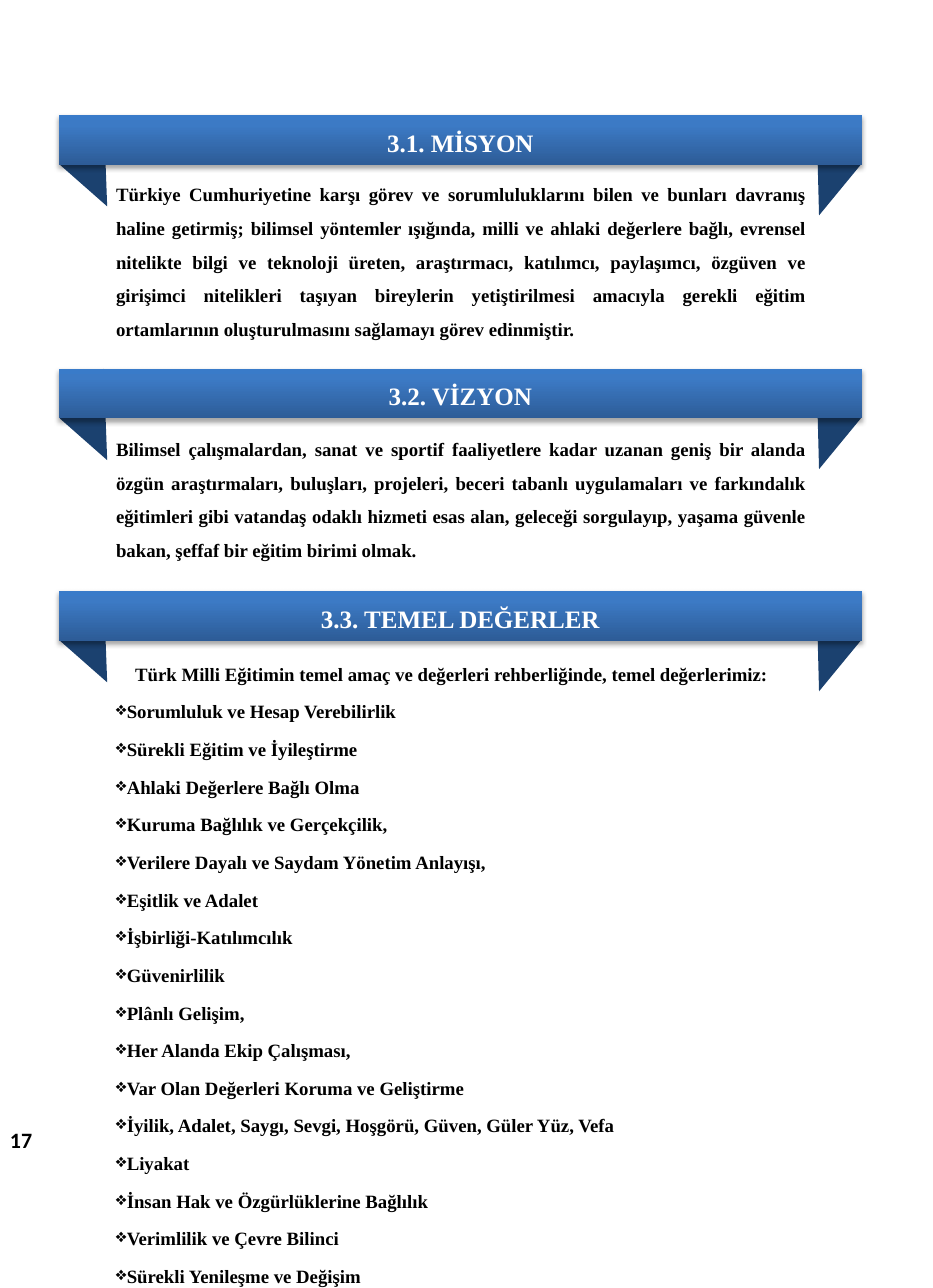
from pptx import Presentation
from pptx.dml.color import RGBColor
from pptx.enum.shapes import MSO_SHAPE
from pptx.enum.text import MSO_ANCHOR, MSO_AUTO_SIZE, PP_ALIGN
from pptx.oxml import parse_xml
from pptx.oxml.ns import nsdecls, qn
from pptx.util import Inches, Pt

BLACK = RGBColor(0x00, 0x00, 0x00)
WHITE = RGBColor(0xFF, 0xFF, 0xFF)
FOLD_BLUE = RGBColor(0x1B, 0x41, 0x6F)
BANNER_STOPS = [
    (0, RGBColor(0x2D, 0x5C, 0x97)),
    (80, RGBColor(0x3C, 0x7A, 0xC5)),
    (100, RGBColor(0x39, 0x7B, 0xC9)),
]
RECTANGLE = MSO_SHAPE.RECTANGLE
MIDDLE = MSO_ANCHOR.MIDDLE
GROW = MSO_AUTO_SIZE.SHAPE_TO_FIT_TEXT
CENTER, JUSTIFY, LEFT = PP_ALIGN.CENTER, PP_ALIGN.JUSTIFY, PP_ALIGN.LEFT
SERIF, SANS = "Times New Roman", "Calibri"

BANNER_LEFT, BANNER_WIDTH, BANNER_HEIGHT = 0.52, 7.12, 0.44
TEXT_LEFT = 0.93
# Corners of the ribbon folds, measured from the banner's top left corner
FOLDS = [
    [(0.01, 0.44), (0.40, 0), (0.43, 0.81)],
    [(7.11, 0.44), (6.74, 0.89), (6.72, 0.12)],
]

MISSION = (
    "Türkiye Cumhuriyetine karşı görev ve sorumluluklarını bilen ve bunları davranış "
    "haline getirmiş; bilimsel yöntemler ışığında, milli ve ahlaki değerlere bağlı, "
    "evrensel nitelikte bilgi ve teknoloji üreten, araştırmacı, katılımcı, paylaşımcı, "
    "özgüven ve girişimci nitelikleri taşıyan bireylerin yetiştirilmesi amacıyla gerekli "
    "eğitim ortamlarının oluşturulmasını sağlamayı görev edinmiştir."
)
VISION = (
    "Bilimsel çalışmalardan, sanat ve sportif faaliyetlere kadar uzanan geniş bir alanda "
    "özgün araştırmaları, buluşları, projeleri, beceri tabanlı uygulamaları ve farkındalık "
    "eğitimleri gibi vatandaş odaklı hizmeti esas alan, geleceği sorgulayıp, yaşama güvenle "
    "bakan, şeffaf bir eğitim birimi olmak."
)
VALUES_INTRO = (
    "Türk Milli Eğitimin temel amaç ve değerleri rehberliğinde, temel değerlerimiz:"
)
VALUES = [
    "Sorumluluk ve Hesap Verebilirlik",
    "Sürekli Eğitim ve İyileştirme",
    "Ahlaki Değerlere Bağlı Olma",
    "Kuruma Bağlılık ve Gerçekçilik,",
    "Verilere Dayalı ve Saydam Yönetim Anlayışı,",
    "Eşitlik ve Adalet",
    "İşbirliği-Katılımcılık",
    "Güvenirlilik",
    "Plânlı Gelişim,",
    "Her Alanda Ekip Çalışması,",
    "Var Olan Değerleri Koruma ve Geliştirme",
    "İyilik, Adalet, Saygı, Sevgi, Hoşgörü, Güven, Güler Yüz, Vefa",
    "Liyakat",
    "İnsan Hak ve Özgürlüklerine Bağlılık",
    "Verimlilik ve Çevre Bilinci",
    "Sürekli Yenileşme ve Değişim",
]


def write(para, text, size, color=BLACK, font=SERIF, align=JUSTIFY, spacing=1.0):
    para.alignment = align
    para.line_spacing = spacing
    span = para.add_run()
    span.text = text
    span.font.name = font
    span.font.size = Pt(size)
    span.font.bold = True
    span.font.color.rgb = color


def set_indent(para, first_line, bullet=None):
    properties = para._p.get_or_add_pPr()
    properties.set("marL", "0")
    properties.set("indent", str(Inches(first_line)))
    if bullet:
        properties.append(parse_xml(
            f'<a:buClr {nsdecls("a")}><a:srgbClr val="{BLACK}"/></a:buClr>'))
        properties.append(parse_xml(f'<a:buChar {nsdecls("a")} char="{bullet}"/>'))


def add_text_frame(page, left, top, width, height):
    box = page.shapes.add_textbox(
        Inches(left), Inches(top), Inches(width), Inches(height))
    frame = box.text_frame
    frame.word_wrap = True
    frame.auto_size = GROW
    return frame


def add_fold(page, left, top, corners):
    points = [(Inches(left + x), Inches(top + y)) for x, y in corners]
    builder = page.shapes.build_freeform(*points[0])
    builder.add_line_segments(points[1:], close=True)
    fold = builder.convert_to_shape()
    fold.shadow.inherit = False
    fold.fill.solid()
    fold.fill.fore_color.rgb = FOLD_BLUE
    fold.line.fill.background()


def style_banner(banner):
    """Give the banner its upward gradient and soft drop shadow."""
    banner.line.fill.background()
    banner.fill.gradient()
    banner.fill.gradient_angle = 90
    properties = banner._element.spPr
    stops = properties.find(qn("a:gradFill")).find(qn("a:gsLst"))
    for stop in list(stops):
        stops.remove(stop)
    for percent, color in BANNER_STOPS:
        stops.append(parse_xml(
            f'<a:gs {nsdecls("a")} pos="{percent * 1000}"><a:srgbClr val="{color}"/></a:gs>'))
    banner.shadow.inherit = False
    properties.find(qn("a:effectLst")).append(parse_xml(
        f'<a:outerShdw {nsdecls("a")} blurRad="{Pt(3.1)}" dist="{Pt(1.8)}" dir="5400000" '
        'rotWithShape="0"><a:srgbClr val="000000"><a:alpha val="35000"/></a:srgbClr>'
        '</a:outerShdw>'))


def add_ribbon(page, top, heading):
    for corners in FOLDS:
        add_fold(page, BANNER_LEFT, top, corners)
    banner = page.shapes.add_shape(
        RECTANGLE, Inches(BANNER_LEFT), Inches(top),
        Inches(BANNER_WIDTH), Inches(BANNER_HEIGHT))
    style_banner(banner)
    banner.text_frame.vertical_anchor = MIDDLE
    write(banner.text_frame.paragraphs[0], heading, 16, WHITE, align=CENTER, spacing=1.15)


def add_statement(page, top, height, text):
    frame = add_text_frame(page, TEXT_LEFT, top, 6.32, height)
    write(frame.paragraphs[0], text, 12, spacing=1.5)


def add_values(page, top, height):
    frame = add_text_frame(page, TEXT_LEFT, top, 6.66, height)
    intro = frame.paragraphs[0]
    set_indent(intro, 0.17)
    write(intro, VALUES_INTRO, 12, spacing=1.67)
    for value in VALUES:
        para = frame.add_paragraph()
        set_indent(para, -0.08, "❖")
        write(para, value, 12, spacing=1.67)


def add_page_number(page, left, top):
    frame = add_text_frame(page, left, top, 0.51, 0.34)
    write(frame.paragraphs[0], "17", 14, font=SANS, align=LEFT)


def main():
    deck = Presentation()
    deck.slide_width, deck.slide_height = Inches(8.27), Inches(11.42)
    page = deck.slides.add_slide(deck.slide_layouts[6])
    add_statement(page, 1.47, 1.62, MISSION)
    add_statement(page, 3.73, 1.31, VISION)
    add_values(page, 5.69, 4.87)
    add_ribbon(page, 1.02, "3.1. MİSYON")
    add_ribbon(page, 3.27, "3.2. VİZYON")
    add_ribbon(page, 5.24, "3.3. TEMEL DEĞERLER")
    add_page_number(page, -0.01, 9.94)
    deck.save("out.pptx")


if __name__ == "__main__":
    main()
